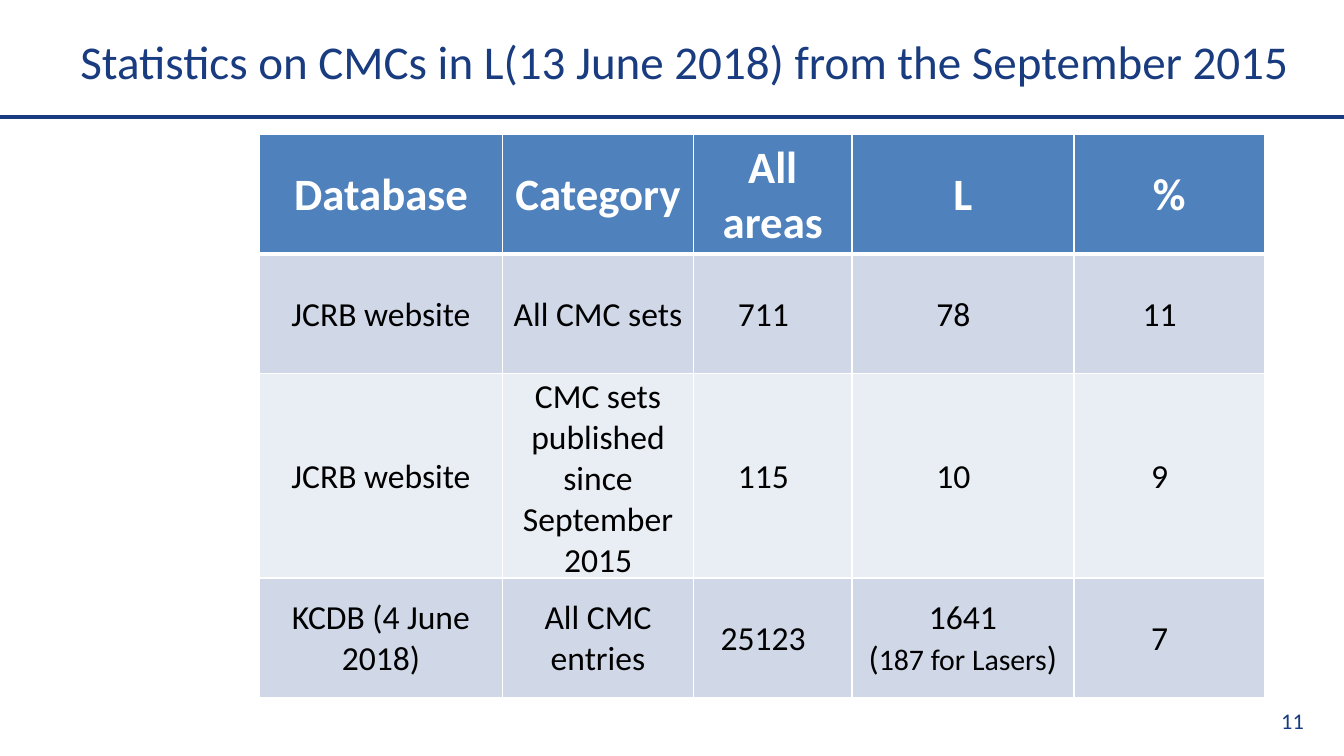
from dataclasses import dataclass

import pptx
import pptx.dml.color
import pptx.enum.shapes
import pptx.enum.text
import pptx.oxml
import pptx.oxml.ns
import pptx.util
from pptx.util import Inches

RGBColor = pptx.dml.color.RGBColor
Align = pptx.enum.text.PP_ALIGN
Anchor = pptx.enum.text.MSO_ANCHOR

NAVY = RGBColor(0x19, 0x3B, 0x7F)
HEADER_BLUE = RGBColor(0x4F, 0x81, 0xBD)
BAND_DARK = RGBColor(0xD0, 0xD8, 0xE8)
BAND_LIGHT = RGBColor(0xE9, 0xED, 0xF4)
WHITE = RGBColor(0xFF, 0xFF, 0xFF)
BLACK = RGBColor(0, 0, 0)
FONT = "Calibri"


@dataclass
class Label:
    text: str
    left: float
    top: float
    width: float
    height: float
    size: float
    align: Align


@dataclass
class RowStyle:
    fill: RGBColor
    color: RGBColor
    size: float
    bold: bool
    number_inset: float
    bottom_border: float


LABELS = [
    Label("Statistics on CMCs in L(13 June 2018) from the September 2015",
          0.5, 0.03, 9.3, 0.84, 25.2, Align.LEFT),
    Label("11", 7.91, 5.21, 1.89, 0.3, 12, Align.RIGHT),
]
ROW_HEIGHT = 0.89  # the row with the long category grows to fit its text
COLUMN_WIDTHS = [1.81, 1.42, 1.18, 1.65, 1.42]
ROWS = [
    ["Database", "Category", "All areas", "L", "%"],
    ["JCRB website", "All CMC sets", "711", "78", "11"],
    ["JCRB website", "CMC sets published since September 2015", "115", "10", "9"],
    ["KCDB (4 June 2018)", "All CMC entries", "25123", "1641", "7"],
]
HEADER = RowStyle(HEADER_BLUE, WHITE, 24, True, 0.02, 3)
DARK_ROW = RowStyle(BAND_DARK, BLACK, 18, False, 0.16, 1)
LIGHT_ROW = RowStyle(BAND_LIGHT, BLACK, 18, False, 0.16, 1)
ROW_STYLES = [HEADER, DARK_ROW, LIGHT_ROW, DARK_ROW]


def style_paragraph(p, size: float, color: RGBColor, align: Align, bold: bool = False) -> None:
    p.alignment = align
    p.font.name = FONT
    p.font.size = pptx.util.Pt(size)
    p.font.bold = bold
    p.font.color.rgb = color


def add_label(s, label: Label) -> None:
    sp = s.shapes.add_textbox(Inches(label.left), Inches(label.top),
                              Inches(label.width), Inches(label.height))
    tf = sp.text_frame
    tf.word_wrap = True
    tf.vertical_anchor = Anchor.MIDDLE
    p = tf.paragraphs[0]
    p.text = label.text
    style_paragraph(p, label.size, NAVY, label.align)


def set_borders(cell, top: float, bottom: float) -> None:
    tc_pr = cell._tc.get_or_add_tcPr()
    for i, (side, width) in enumerate(
            [("lnL", 1), ("lnR", 1), ("lnT", top), ("lnB", bottom)]):
        tc_pr.insert(i, pptx.oxml.parse_xml(
            f'<a:{side} {pptx.oxml.ns.nsdecls("a")} w="{pptx.util.Pt(width)}">'
            f'<a:solidFill><a:srgbClr val="{WHITE}"/></a:solidFill></a:{side}>'))


def fill_cell(cell, text: str, style: RowStyle, right_inset: float) -> None:
    cell.fill.solid()
    cell.fill.fore_color.rgb = style.fill
    cell.vertical_anchor = Anchor.MIDDLE
    cell.margin_left = cell.margin_top = Inches(0.02)
    cell.margin_right = Inches(right_inset)
    cell.margin_bottom = 0
    p = cell.text_frame.paragraphs[0]
    p.text = text
    style_paragraph(p, style.size, style.color, Align.CENTER, style.bold)


def add_laser_count(cell, style: RowStyle) -> None:
    cell.margin_left = cell.margin_top = cell.margin_right = Inches(0.01)
    p = cell.text_frame.add_paragraph()
    style_paragraph(p, style.size, style.color, Align.CENTER)
    for text, size in [("(", 18), ("187 for Lasers", 16), (")", 18)]:
        r = p.add_run()
        r.text = text
        r.font.size = pptx.util.Pt(size)


def add_statistics_table(s) -> None:
    table = s.shapes.add_table(
        len(ROWS), len(COLUMN_WIDTHS), Inches(1.93), Inches(1),
        Inches(sum(COLUMN_WIDTHS)), Inches(4.18)).table
    for column, width in zip(table.columns, COLUMN_WIDTHS):
        column.width = Inches(width)
    top_border = 1
    for i, (texts, style) in enumerate(zip(ROWS, ROW_STYLES)):
        table.rows[i].height = Inches(ROW_HEIGHT)
        for j, text in enumerate(texts):
            cell = table.cell(i, j)
            fill_cell(cell, text, style, style.number_inset if j >= 2 else 0.02)
            set_borders(cell, top_border, style.bottom_border)
        top_border = style.bottom_border
    add_laser_count(table.cell(3, 3), DARK_ROW)


def add_rule(s) -> None:
    line = s.shapes.add_connector(pptx.enum.shapes.MSO_CONNECTOR.STRAIGHT,
                                  0, Inches(0.87), Inches(10), Inches(0.87))
    line.line.color.rgb = NAVY
    line.line.width = pptx.util.Pt(2.25)
    line._element.spPr.append(pptx.oxml.parse_xml(
        f'<a:effectLst {pptx.oxml.ns.nsdecls("a")}/>'))


def main() -> None:
    # A 16:9 slide
    prs = pptx.Presentation()
    prs.slide_width = Inches(10)
    prs.slide_height = prs.slide_width * 9 // 16
    s = prs.slides.add_slide(prs.slide_layouts[6])

    # Title, page number and the rule below the title
    add_rule(s)
    for label in LABELS:
        add_label(s, label)

    # Statistics
    add_statistics_table(s)
    prs.save("out.pptx")


if __name__ == "__main__":
    main()
